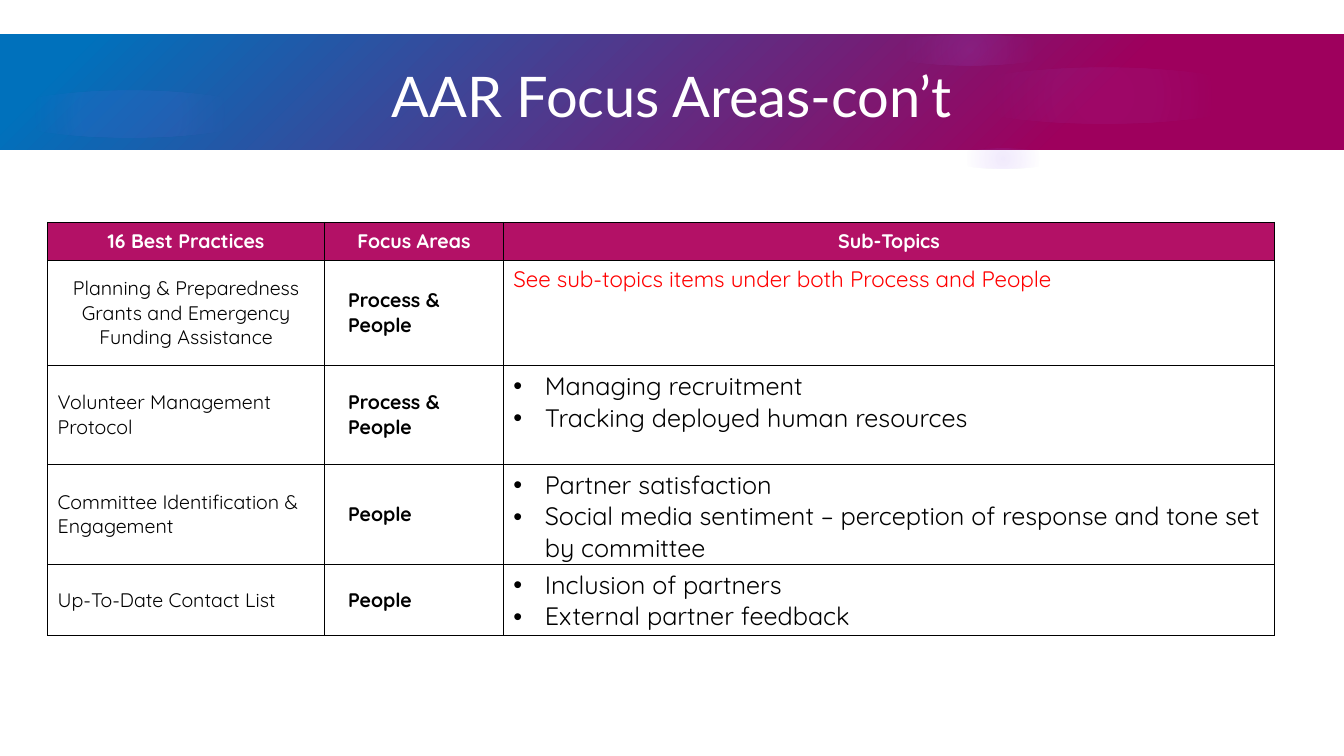
"""Build the AAR focus areas slide: a gradient title band above a table."""
from lxml import etree
from pptx import Presentation
from pptx.dml.color import RGBColor
from pptx.enum.shapes import MSO_SHAPE
from pptx.enum.text import MSO_ANCHOR, MSO_AUTO_SIZE, PP_ALIGN
from pptx.oxml.ns import qn
from pptx.util import Pt

RECT, OVAL = MSO_SHAPE.RECTANGLE, MSO_SHAPE.OVAL
MID, TOP = MSO_ANCHOR.MIDDLE, MSO_ANCHOR.TOP
LEFT, CENTER = PP_ALIGN.LEFT, PP_ALIGN.CENTER

TITLE = "AAR Focus Areas-con’t"
HEADS = ["16 Best Practices", "Focus Areas", "Sub-Topics"]
ROWS = [
    ("Planning & Preparedness Grants and Emergency Funding Assistance",
     "Process & People",
     ["See sub-topics items under both Process and People"]),
    ("Volunteer Management Protocol", "Process & People",
     ["Managing recruitment", "Tracking deployed human resources"]),
    ("Committee Identification & Engagement", "People",
     ["Partner satisfaction",
      "Social media sentiment – perception of response and tone set by committee"]),
    ("Up-To-Date Contact List", "People",
     ["Inclusion of partners", "External partner feedback"]),
]
BAND = (0, 24.5, 960, 82.5)
BLEND = [(20, "9E005D", 100), (94, "0071BC", 100)]
GLOW = "9B6BF2"
GLOWS = [
    ((0, 65, 186, 33), (8, 8), 72),
    ((677.5, 106.5, 78, 14), (14, 7), 66),
    ((677.5, 48, 222, 40), (7, 6), 69),
    ((630, 24.5, 126, 22), (14, 7), 73),
]
WIDTHS = [198, 127.5, 551]
HEIGHTS = [27.2, 75, 70.6, 71.4, 51.2]
HEAD = {"size": Pt(14), "bold": True, "name": "Quicksand"}
NAME = {**HEAD, "bold": False}
NOTE = {**NAME, "size": Pt(16)}
ITEM = {**NAME, "size": Pt(18)}


def tint(code):
    return RGBColor.from_string(code)


def sub(node, tag, **attrs):
    child = etree.SubElement(node, qn(tag))
    for key, val in attrs.items():
        child.set(key, str(val))
    return child


def blend(shape, stops, angle=None):
    shape.fill.background()
    props = shape.fill._xPr
    old = props.find(qn("a:noFill"))
    grad = sub(props, "a:gradFill", rotWithShape=1)
    props.replace(old, grad)
    group = sub(grad, "a:gsLst")
    for pos, code, alpha in stops:
        stop = sub(group, "a:gs", pos=pos * 1000)
        color = sub(stop, "a:srgbClr", val=code)
        sub(color, "a:alpha", val=alpha * 1000)
    if angle is None:
        way = sub(grad, "a:path", path="circle")
        sub(way, "a:fillToRect", l=50000, t=50000, r=50000, b=50000)
    else:
        sub(grad, "a:lin", ang=angle * 60000, scaled=0)


def draw(slide, kind, box, stops, angle=None):
    shape = slide.shapes.add_shape(kind, *map(Pt, box))
    shape.shadow.inherit = False
    shape.line.fill.background()
    blend(shape, stops, angle)


def write(para, text, look, color, align):
    para.alignment = align
    run = para.add_run()
    run.text = text
    for key, val in look.items():
        setattr(run.font, key, val)
    run.font.color.rgb = tint(color)


def indent(para, left, mark=None):
    props = para._p.get_or_add_pPr()
    props.set("marL", str(Pt(left)))
    props.set("indent", str(-Pt(left) if mark else 0))
    if mark:
        sub(props, "a:buFont", typeface="Arial")
        sub(props, "a:buChar", char=mark)


def edge(cell):
    props = cell._tc.get_or_add_tcPr()
    for spot, side in enumerate(("a:lnL", "a:lnR", "a:lnT", "a:lnB")):
        line = etree.Element(qn(side), w=str(Pt(0.75)))
        sub(sub(line, "a:solidFill"), "a:srgbClr", val="000000")
        props.insert(spot, line)


def fill(cell, lines, look, color, align=LEFT, anchor=MID, left=0, mark=None):
    cell.vertical_anchor = anchor
    frame = cell.text_frame
    for num, text in enumerate(lines):
        para = frame.add_paragraph() if num else frame.paragraphs[0]
        if left:
            indent(para, left, mark)
        write(para, text, look, color, align)


def grid(slide):
    frame = slide.shapes.add_table(
        len(HEIGHTS), len(WIDTHS), Pt(34), Pt(158.7),
        Pt(sum(WIDTHS)), Pt(sum(HEIGHTS)))
    table = frame.table
    table.first_row = table.horz_banding = False
    for col, width in zip(table.columns, WIDTHS):
        col.width = Pt(width)
    for row, height in zip(table.rows, HEIGHTS):
        row.height = Pt(height)
    for cell in table.iter_cells():
        cell.fill.background()
        edge(cell)
    for col, text in enumerate(HEADS):
        cell = table.cell(0, col)
        cell.fill.solid()
        cell.fill.fore_color.rgb = tint("B31166")
        for side in ("left", "right", "top", "bottom"):
            setattr(cell, "margin_" + side, 0)
        fill(cell, [text], HEAD, "FFFFFF", CENTER)
    for num, (name, area, topics) in enumerate(ROWS, 1):
        first, second, third = table.rows[num].cells
        fill(first, [name], NAME, "000000", CENTER if num == 1 else LEFT)
        fill(second, [area], HEAD, "000000", left=9.4)
        third.margin_bottom = 0
        if num == 1:
            fill(third, topics, NOTE, "FF0000", anchor=TOP)
        else:
            fill(third, topics, ITEM, "000000", anchor=TOP, left=22.5, mark="•")


def main():
    deck = Presentation()
    deck.slide_width, deck.slide_height = Pt(960), Pt(540)
    slide = deck.slides.add_slide(deck.slide_layouts[5])
    draw(slide, RECT, BAND, BLEND, 225)
    for box, (core, ring), end in GLOWS:
        draw(slide, OVAL, box, [(0, GLOW, core), (36, GLOW, ring), (end, GLOW, 0)])
    title = slide.shapes.title
    slide.shapes._spTree.append(title._element)
    place = {"left": 49.7, "top": 40.3, "width": 860.4, "height": 55.4}
    for key, val in place.items():
        setattr(title, key, Pt(val))
    frame = title.text_frame
    frame.auto_size, frame.word_wrap = MSO_AUTO_SIZE.NONE, True
    frame.vertical_anchor = MID
    write(frame.paragraphs[0], TITLE, {"size": Pt(40), "name": "Lato"}, "FFFFFF", CENTER)
    grid(slide)
    deck.save("out.pptx")


if __name__ == "__main__":
    main()
